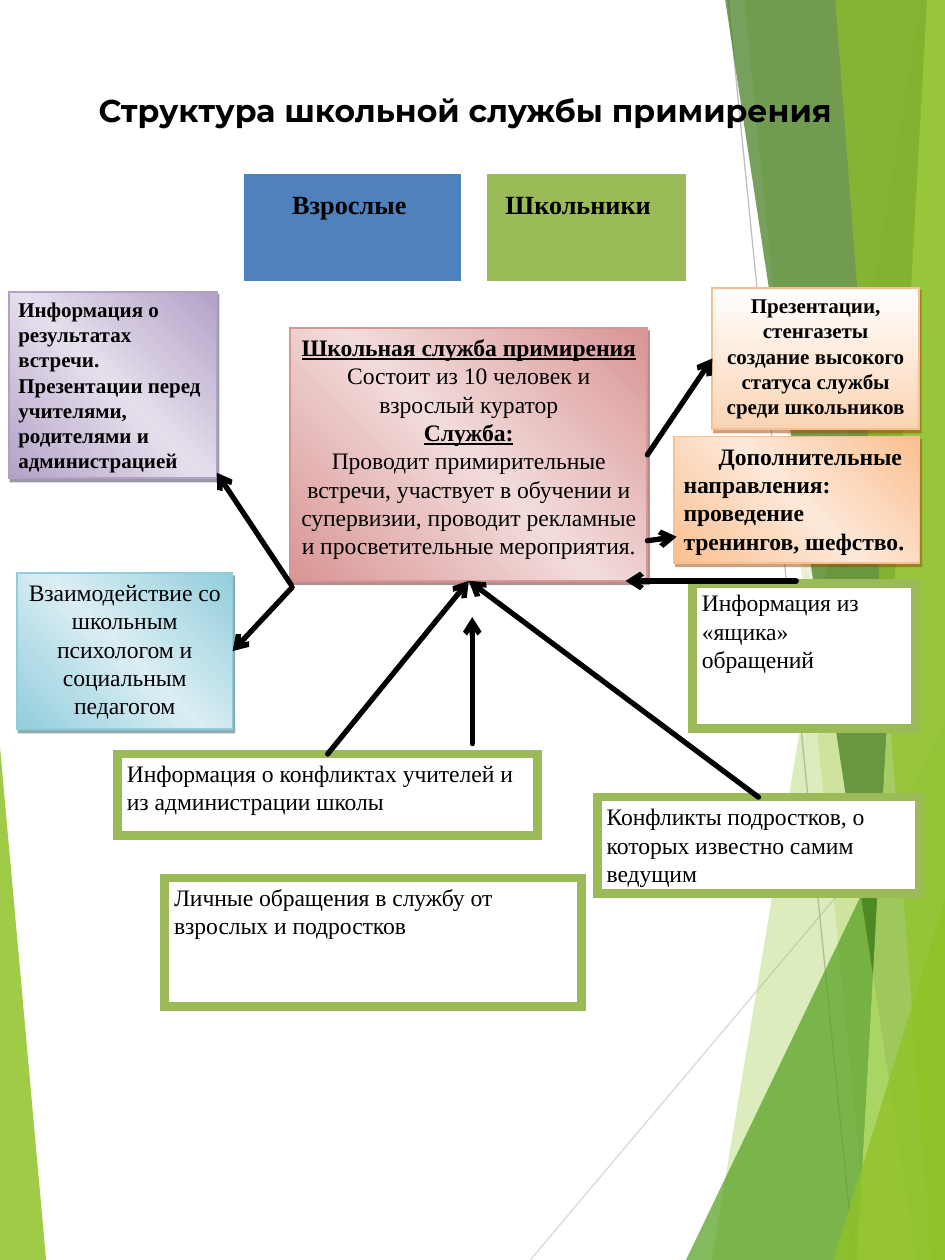
from lxml.etree import SubElement
from pptx import Presentation
from pptx.dml.color import RGBColor
from pptx.enum.shapes import MSO_CONNECTOR as Connector, MSO_SHAPE as Shape
from pptx.enum.text import MSO_ANCHOR as Anchor, MSO_AUTO_SIZE as AutoSize, PP_ALIGN as Align
from pptx.oxml.ns import qn
from pptx.util import Cm, Pt

COLORS = {
    "lime": "90C226", "leaf": "54A021", "forest": "3F7819", "pale": "C0E474",
    "light_gray": "D9D9D9", "gray": "BFBFBF", "black": "000000", "white": "FFFFFF",
    "blue": "4F81BD", "green": "9BBB59",
    "violet": "B2A1C7", "violet_light": "E5DFEC", "violet_dark": "3F3151",
    "peach": "FBD4B4", "orange": "FABF8F", "orange_light": "FDE9D9", "orange_dark": "974706",
    "rose": "D99594", "rose_light": "F2DBDB", "rose_dark": "622423",
    "aqua": "92CDDC", "aqua_light": "DAEEF3", "aqua_dark": "205867",
}
WIDTH, HEIGHT = 19.05, 25.4


def add_color(parent, color, alpha=100):
    element = SubElement(parent, qn("a:srgbClr"), val=COLORS[color])
    if alpha < 100:
        SubElement(element, qn("a:alpha"), val=str(alpha * 1000))


def add_line(start, end, color, width):
    line = slide.shapes.add_connector(Connector.STRAIGHT, *map(Cm, start + end))
    line.line.color.rgb = RGBColor.from_string(COLORS[color])
    line.line.width = Pt(width)
    SubElement(line._element.spPr, qn("a:effectLst"))
    return line


presentation = Presentation()
scale_x = Cm(WIDTH) / presentation.slide_width
scale_y = Cm(HEIGHT) / presentation.slide_height
presentation.slide_width, presentation.slide_height = Cm(WIDTH), Cm(HEIGHT)
for page in [*presentation.slide_layouts, presentation.slide_master]:
    for shape in page.placeholders:
        place = {"left": shape.left * scale_x, "top": shape.top * scale_y,
                 "width": shape.width * scale_x, "height": shape.height * scale_y}
        for name, value in place.items():
            setattr(shape, name, int(value))
slide = presentation.slides.add_slide(presentation.slide_layouts[5])

add_line((10.69, HEIGHT), (WIDTH, 15.47), "light_gray", 0.75)
add_line((14.68, 0), (17.22, HEIGHT), "gray", 0.75)

corner, top_corner = (WIDTH, HEIGHT), (WIDTH, 0)
facets = [
    ([(0, 15.05), (0.93, HEIGHT), (0, HEIGHT)], "lime", 85),
    ([(18.57, 0), (14.35, HEIGHT), corner, top_corner], "lime", 30),
    ([(15.01, 0), (17.53, HEIGHT), corner, top_corner], "lime", 20),
    ([(13.83, HEIGHT), (WIDTH, 14.53), corner], "leaf", 72),
    ([(14.62, 0), (18.47, HEIGHT), corner, top_corner], "forest", 70),
    ([(18.69, 0), (17.28, HEIGHT), corner, top_corner], "pale", 70),
    ([(16.84, 0), (18.77, HEIGHT), corner, top_corner], "lime", 65),
    ([(16.8, HEIGHT), (WIDTH, 18.14), corner], "lime", 80),
]
for points, color, alpha in facets:
    corners = [(Cm(x), Cm(y)) for x, y in points]
    builder = slide.shapes.build_freeform(*corners[0])
    builder.add_line_segments(corners[1:])
    shape = builder.convert_to_shape()
    shape.shadow.inherit = False
    shape.line.fill.background()
    shape.fill.solid()
    shape.fill.fore_color.rgb = RGBColor.from_string(COLORS[color])
    rgb = shape._element.spPr.find(".//" + qn("a:srgbClr"))
    SubElement(rgb, qn("a:alpha"), val=str(alpha * 1000))

title = slide.shapes.title
slide.shapes._spTree.append(title._element)
title.left, title.top, title.width, title.height = Cm(1.8), Cm(0.91), Cm(15.16), Cm(2.18)
title.text_frame.text = "Структура школьной службы примирения"
frame_format = {"auto_size": AutoSize.NONE, "word_wrap": True, "vertical_anchor": Anchor.MIDDLE,
                "margin_left": Cm(0.15), "margin_right": Cm(0.15),
                "margin_top": Cm(0.55), "margin_bottom": Cm(0.1)}
for name, value in frame_format.items():
    setattr(title.text_frame, name, value)
title.text_frame.paragraphs[0].alignment = Align.CENTER
title_font = title.text_frame.paragraphs[0].runs[0].font
for name, value in {"name": "Montserrat", "size": Pt(18), "bold": True}.items():
    setattr(title_font, name, value)
title_font.color.rgb = RGBColor.from_string(COLORS["black"])

center, left = Align.CENTER, Align.LEFT
violet = (["violet", "violet_light", "violet"], 45, "violet", 1, "violet_dark")
peach = (["white", "peach"], 270, "orange", 1, "orange_dark")
orange = (["orange", "orange_light", "orange"], 45, "orange", 1, "orange_dark")
rose = (["rose", "rose_light", "rose"], 45, "rose", 1, "rose_dark")
aqua = (["aqua", "aqua_light", "aqua"], 45, "aqua", 1, "aqua_dark")
blue = (["blue"], 0, "blue", 10, None)
green = (["green"], 0, "green", 10, None)
framed = (["white"], 0, "green", 5, None)
plain, bold, heading = {}, {"bold": True}, {"bold": True, "underline": True}

boxes = {
    "results": ((0.18, 5.88, 4.19, 3.76), violet, left, 12, [
        ("Информация о результатах встречи. Презентации перед учителями, родителями и администрацией", bold)]),
    "displays": ((14.36, 5.8, 4.17, 2.85), peach, center, 12, [
        ("Презентации, стенгазеты создание высокого статуса службы среди школьников", bold)]),
    "adults": ((5.1, 3.69, 4.02, 1.8), blue, center, 15, [("Взрослые ", bold)]),
    "pupils": ((10, 3.69, 3.65, 1.8), green, left, 15, [("Школьники", bold)]),
    "service": ((5.85, 6.61, 7.2, 5.1), rose, center, 13.5, [
        ("Школьная служба примирения", heading),
        ("Состоит из 10 человек и взрослый куратор", plain),
        ("Служба:", heading),
        ("Проводит примирительные встречи, участвует в обучении и супервизии, "
         "проводит рекламные и просветительные мероприятия.", plain)]),
    "psychologist": ((0.34, 11.55, 4.35, 3.15), aqua, center, 13.5, [
        ("Взаимодействие со школьным психологом и социальным педагогом", plain)]),
    "extra": ((13.59, 8.8, 4.95, 2.55), orange, left, 13.5, [
        ("Дополнительные направления: проведение тренингов, шефство.", bold)]),
    "staff": ((2.37, 15.2, 8.47, 1.65), framed, left, 13.5, [
        ("Информация о конфликтах учителей и из администрации школы", plain)]),
    "personal": ((3.32, 17.7, 8.4, 2.59), framed, left, 13.5, [
        ("Личные обращения в службу от взрослых и подростков", plain)]),
    "letters": ((13.96, 11.76, 4.49, 2.93), framed, left, 13.5, [
        ("Информация из «ящика» обращений", plain)]),
    "teens": ((12.04, 16.07, 6.5, 1.95), framed, left, 13.5, [
        ("Конфликты подростков, о которых известно самим ведущим", plain)]),
}
box_format = {"word_wrap": True, "vertical_anchor": Anchor.TOP,
              "margin_left": Cm(0.19), "margin_right": Cm(0.19),
              "margin_top": Cm(0.1), "margin_bottom": Cm(0.1)}
shapes = {}
for key, (place, (fills, angle, edge, weight, shade), alignment, size, texts) in boxes.items():
    shape = shapes[key] = slide.shapes.add_shape(Shape.RECTANGLE, *map(Cm, place))
    shape.shadow.inherit = False
    shape.line.color.rgb = RGBColor.from_string(COLORS[edge])
    shape.line.width = Pt(weight)
    SubElement(shape._element.spPr.find(qn("a:ln")), qn("a:miter"), lim="800000")
    if len(fills) == 1:
        shape.fill.solid()
        shape.fill.fore_color.rgb = RGBColor.from_string(COLORS[fills[0]])
    else:
        shape.fill.gradient()
        shape.fill.gradient_angle = angle
        stops = shape._element.spPr.find(".//" + qn("a:gsLst"))
        stops.clear()
        for index, color in enumerate(fills):
            position = 100000 * index // (len(fills) - 1)
            add_color(SubElement(stops, qn("a:gs"), pos=str(position)), color)
    if shade:
        effects = shape._element.spPr.find(qn("a:effectLst"))
        shadow = SubElement(effects, qn("a:outerShdw"), blurRad="0", dist=str(Pt(2.2)),
                            dir=str(63 * 60000), algn="ctr", rotWithShape="0")
        add_color(shadow, shade, 50)
    for name, value in box_format.items():
        setattr(shape.text_frame, name, value)
    for index, (text, style) in enumerate(texts):
        paragraph = shape.text_frame.paragraphs[0] if index == 0 else shape.text_frame.add_paragraph()
        paragraph.alignment = alignment
        run = paragraph.add_run()
        run.text = text
        for name, value in {"name": "Times New Roman", "size": Pt(size), **style}.items():
            setattr(run.font, name, value)
        run.font.color.rgb = RGBColor.from_string(COLORS["black"])
shapes["extra"].text_frame.paragraphs[0]._p.get_or_add_pPr().set("indent", str(Cm(0.71)))

arrows = [
    ((9.52, 14.99), (9.52, 12.44), None, None),
    ((15.29, 16.07), (9.45, 11.71), ("teens", 0), ("service", 2)),
    ((6.6, 15.2), (9.45, 11.71), ("staff", 0), ("service", 2)),
    ((16.05, 11.71), (12.61, 11.71), None, None),
    ((5.87, 11.79), (4.37, 9.53), None, None),
    ((5.89, 11.84), (4.69, 13.12), None, ("psychologist", 3)),
    ((13.05, 10.9), (13.64, 10.82), None, None),
    ((13.05, 9.17), (14.36, 7.22), None, ("displays", 1)),
]
for start, end, source, target in arrows:
    arrow = add_line(start, end, "black", 3)
    if source:
        arrow.begin_connect(shapes[source[0]], source[1])
    if target:
        arrow.end_connect(shapes[target[0]], target[1])
    outline = arrow._element.spPr.find(qn("a:ln"))
    outline.set("cap", "rnd")
    SubElement(outline, qn("a:round"))
    SubElement(outline, qn("a:tailEnd"), type="arrow")

presentation.save("out.pptx")
